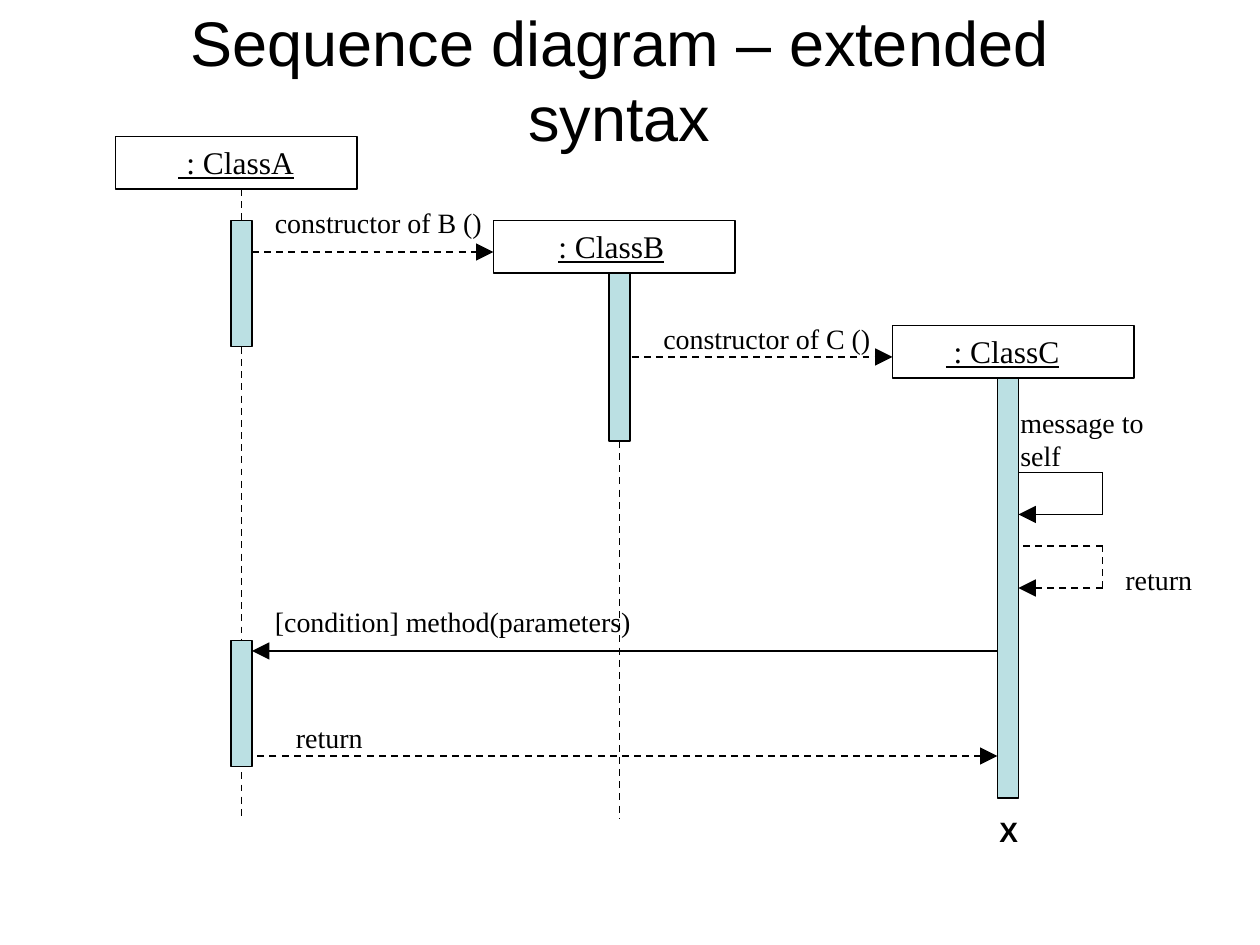
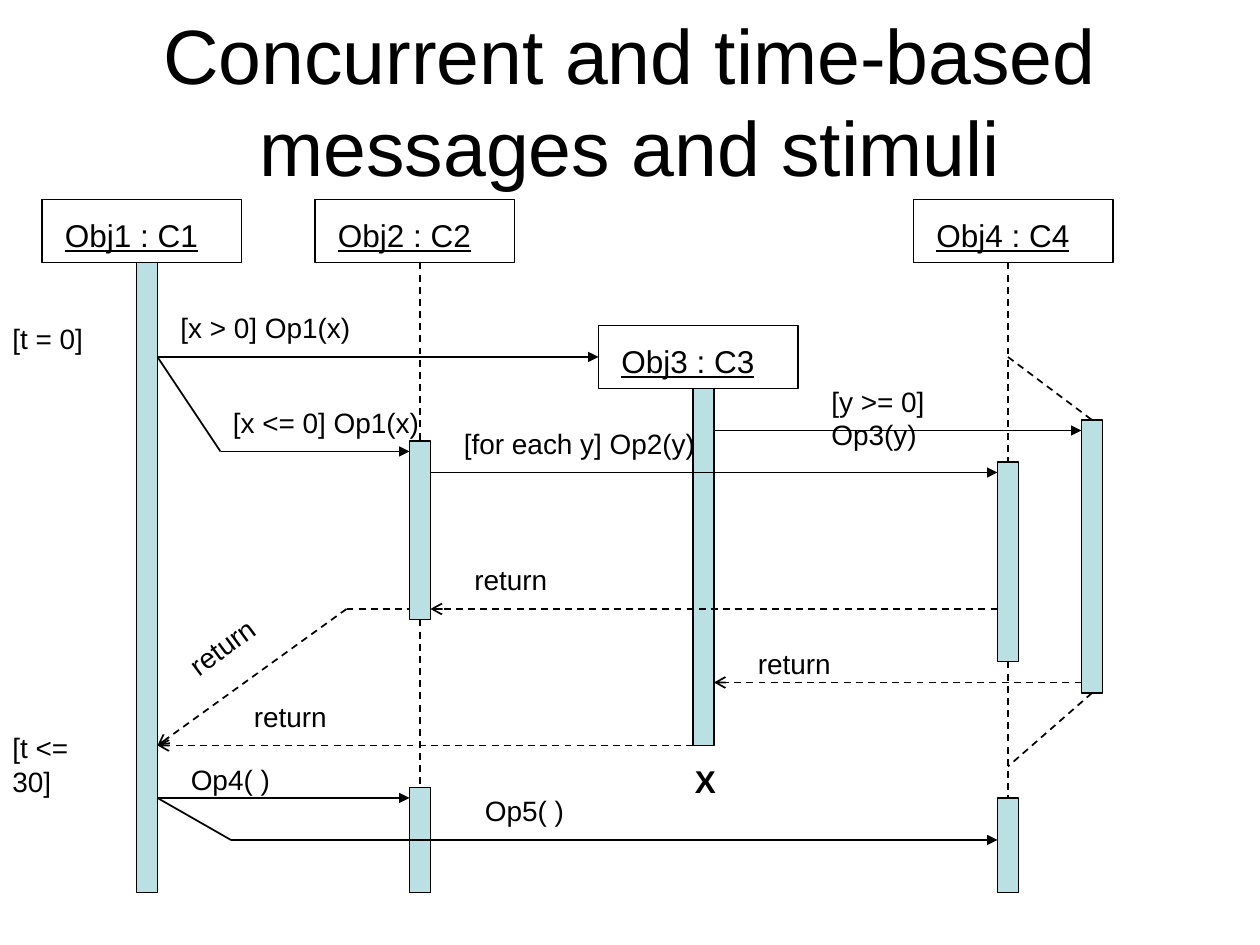
from lxml import etree
from pptx import Presentation
from pptx.dml.color import RGBColor
from pptx.enum.dml import MSO_LINE
from pptx.enum.shapes import MSO_CONNECTOR, MSO_SHAPE
from pptx.enum.text import MSO_ANCHOR, MSO_AUTO_SIZE, PP_ALIGN
from pptx.oxml.ns import qn
from pptx.util import Inches, Pt

RECT = MSO_SHAPE.RECTANGLE
STRAIGHT = MSO_CONNECTOR.STRAIGHT
DASH = MSO_LINE.DASH
LEFT, CENTER = PP_ALIGN.LEFT, PP_ALIGN.CENTER
MIDDLE = MSO_ANCHOR.MIDDLE
NO_FIT, GROW = MSO_AUTO_SIZE.NONE, MSO_AUTO_SIZE.SHAPE_TO_FIT_TEXT

# Shared style: a grid of 120 columns by 90 rows
COLUMNS, ROWS = 120, 90
INK, BAR_FILL = "000000", "BBE0E3"
SANS, SERIF = "Arial", "Times New Roman"
LINE_WIDTH = Pt(1)
BAR_WIDTH = 2
LABEL_SIZE, NAME_SIZE = 16, 18


def color(hex_code):
    return RGBColor.from_string(hex_code)


def apply(target, values):
    for name, value in values.items():
        setattr(target, name, value)


class Diagram:
    """Holds the deck, the current page and the style of its elements."""

    def __init__(self):
        self.deck = Presentation()
        apply(self.deck, {"slide_width": Inches(10), "slide_height": Inches(7.5)})
        self.column = self.deck.slide_width / COLUMNS
        self.row = self.deck.slide_height / ROWS

    def place(self, left, top, width, height):
        return (round(left * self.column), round(top * self.row),
                round(width * self.column), round(height * self.row))

    def start_page(self, title, area, title_size, font, head_size):
        self.page = self.deck.slides.add_slide(self.deck.slide_layouts[5])
        self.font, self.head_size = font, head_size
        box = self.page.shapes.title
        apply(box, dict(zip(("left", "top", "width", "height"), self.place(*area))))
        apply(box.text_frame, {"word_wrap": True, "auto_size": NO_FIT,
                               "vertical_anchor": MIDDLE})
        self.add_text(box, title, CENTER, {"size": Pt(title_size), "name": SANS})

    def add_text(self, box, text, align, style):
        para = box.text_frame.paragraphs[0]
        para.alignment = align
        span = para.add_run()
        span.text = text
        apply(span.font, style)
        span.font.color.rgb = color(INK)

    def label(self, text, left, top, width, size=LABEL_SIZE, align=LEFT,
              turn=0, font=None, **style):
        height = 4.8 if size == NAME_SIZE else 4.4
        box = self.page.shapes.add_textbox(*self.place(left, top, width, height))
        box.rotation = turn
        apply(box.text_frame, {"word_wrap": True, "auto_size": GROW})
        self.add_text(box, text, align,
                      {"size": Pt(size), "name": font or self.font, **style})

    def name(self, text, left, top, width, align=LEFT):
        self.label(text, left, top, width, NAME_SIZE, align, underline=True)

    def end_mark(self, left, top, width, size):
        self.label("X", left, top, width, size, font=SANS, bold=True)

    def rectangle(self, left, top, width, height, fill=None):
        shape = self.page.shapes.add_shape(RECT, *self.place(left, top, width, height))
        shape.shadow.inherit = False
        if fill:
            shape.fill.solid()
            shape.fill.fore_color.rgb = color(fill)
        else:
            shape.fill.background()
        shape.line.color.rgb = color(INK)
        shape.line.width = LINE_WIDTH

    def bar(self, left, top, height):
        self.rectangle(left, top, BAR_WIDTH, height, BAR_FILL)

    def line(self, start, end, dashed=False, tip=None, tip_at="tailEnd"):
        link = self.page.shapes.add_connector(
            STRAIGHT, *self.place(*start, *end))
        link.line.color.rgb = color(INK)
        link.line.width = LINE_WIDTH
        if dashed:
            link.line.dash_style = DASH
        properties = link.element.spPr
        if tip:
            etree.SubElement(properties.find(qn("a:ln")), qn(f"a:{tip_at}"),
                             type=tip, w=self.head_size, len=self.head_size)
        etree.SubElement(properties, qn("a:effectLst"))

    def arrow(self, start, end, dashed=False, tip_at="tailEnd"):
        self.line(start, end, dashed, "triangle", tip_at)

    def answer(self, start, end):
        self.line(start, end, True, "arrow")

    def lifeline(self, column, top, bottom):
        self.line((column, top), (column, bottom), True)

    def self_message(self, top, dashed):
        bottom, near, far = top + 4, 96, 105
        self.arrow((far, bottom), (near + 1, bottom), dashed)
        self.line((far, bottom), (far, top), dashed)
        self.line((far, top), (near, top), dashed)


def extended_syntax(diagram):
    diagram.start_page("Sequence diagram – extended syntax",
                       (8, 4, 102, 7), 36, SERIF, "lg")

    # Objects and lifelines
    for left, top in ((11, 13), (85, 31), (47, 21)):
        diagram.rectangle(left, top, 23, 5)
    diagram.lifeline(23, 18, 78)
    diagram.lifeline(59, 42, 78)
    diagram.name(" : ClassA", 11, 13, 23, CENTER)
    diagram.name(": ClassB", 52, 21, 23)
    diagram.name(" : ClassC", 84, 31, 23, CENTER)

    # Messages
    diagram.arrow((24, 24), (47, 24), True)
    diagram.arrow((59, 34), (85, 34), True)
    diagram.self_message(45, False)
    diagram.self_message(52, True)
    diagram.arrow((24, 62), (95, 62), tip_at="headEnd")
    diagram.arrow((95, 72), (24, 72), True, "headEnd")

    # Activation bars
    for bar in ((22, 21, 12), (22, 61, 12), (58, 26, 16), (95, 36, 40)):
        diagram.bar(*bar)

    # Message labels
    for text, left, top, width in (
            ("constructor of B ()", 25, 19, 24),
            ("constructor of C ()", 62, 30, 25),
            ("message to self", 96, 38, 18),
            ("return", 106, 53, 14),
            ("[condition] method(parameters)", 25, 57, 41),
            ("return", 27, 68, 32)):
        diagram.label(text, left, top, width)
    diagram.end_mark(94, 77, 6, LABEL_SIZE)


def concurrent_messages(diagram):
    diagram.start_page("Concurrent and time-based messages and stimuli",
                       (9, 2, 102, 15), 44, SANS, "med")

    # Objects
    for number, (left, top) in enumerate(((4, 19), (30, 19), (57, 31), (87, 19)), 1):
        diagram.rectangle(left, top, 19, 6)
        diagram.name(f"Obj{number} : C{number}", left + 1, top + 1, 17)

    # Activation bars
    for bar in ((13, 25, 60), (39, 42, 17), (66, 37, 34), (95, 44, 19),
                (103, 40, 26), (39, 75, 10), (95, 76, 9)):
        diagram.bar(*bar)

    # Lifelines, with the fourth one branching out and back
    for lifeline in ((40, 25, 42), (40, 59, 75), (96, 25, 44), (96, 63, 76)):
        diagram.lifeline(*lifeline)
    diagram.line((96, 34), (104, 40), True)
    diagram.line((104, 66), (96, 73), True)

    # Calls
    for start, end in (((15, 34), (57, 34)), ((21, 43), (39, 43)),
                       ((68, 41), (103, 41)), ((41, 45), (95, 45)),
                       ((15, 76), (39, 76)), ((22, 80), (95, 80))):
        diagram.arrow(start, end)
    diagram.line((15, 34), (21, 43))
    diagram.line((15, 76), (22, 80))

    # Returns
    for start, end in (((95, 58), (41, 58)), ((103, 65), (68, 65)),
                       ((66, 71), (15, 71)), ((33, 58), (15, 71))):
        diagram.answer(start, end)
    diagram.line((33, 58), (39, 58), True)

    # Message labels
    for text, left, top, width in (
            ("[x > 0] Op1(x)", 16, 29, 24),
            ("[x <= 0] Op1(x)", 21, 38, 25),
            ("[for each y] Op2(y)", 43, 40, 27),
            ("[y >= 0] Op3(y)", 78, 36, 20),
            ("return", 44, 53, 16),
            ("return", 71, 61, 19),
            ("return", 23, 66, 16),
            ("[t = 0]", 0, 30, 11),
            ("[t <= 30]", 0, 69, 12),
            ("Op4( )", 17, 72, 18),
            ("Op5( )", 45, 75, 19)):
        diagram.label(text, left, top, width)
    diagram.label("return", 16, 58, 14, turn=323.6)
    diagram.end_mark(65, 72, 4, NAME_SIZE)


def main():
    diagram = Diagram()
    extended_syntax(diagram)
    concurrent_messages(diagram)
    diagram.deck.save("out.pptx")


if __name__ == "__main__":
    main()
